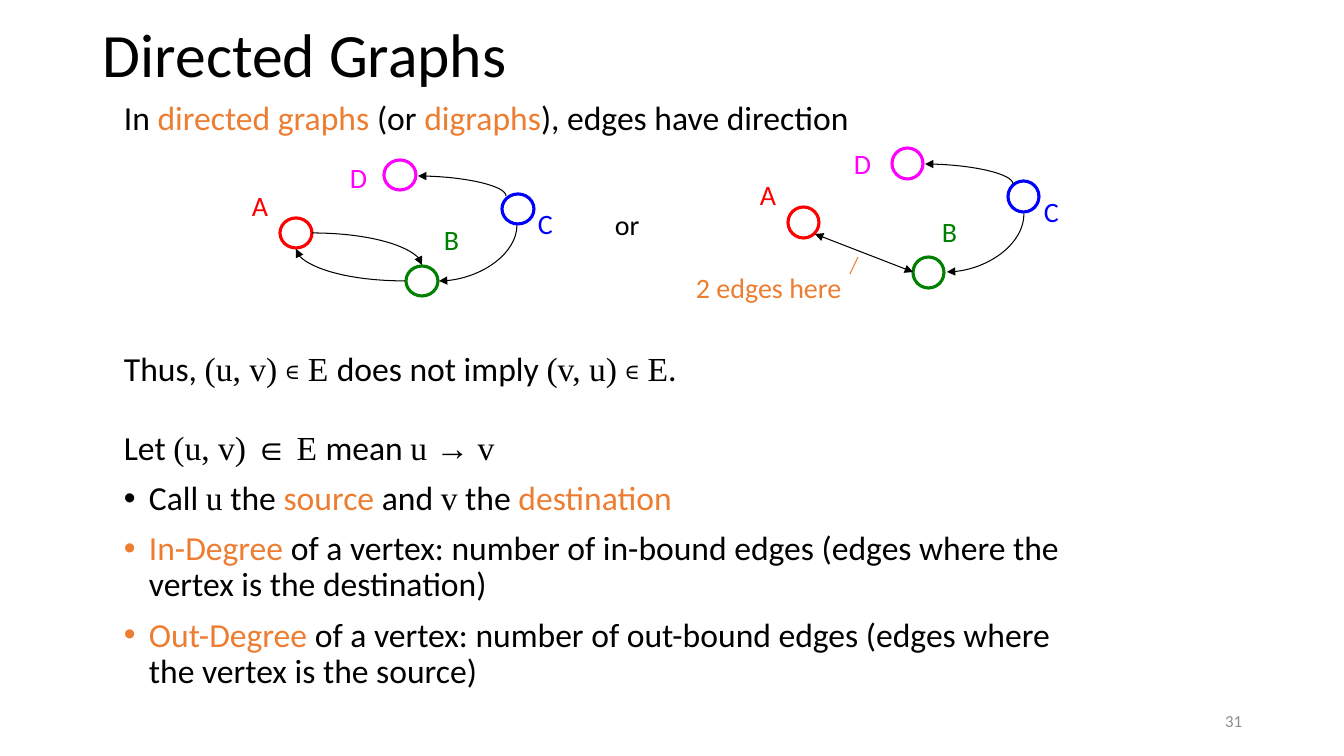
"""Build the Directed Graphs slide with two small digraphs and their definitions."""
import pptx
import pptx.dml.color
import pptx.enum.shapes
import pptx.enum.text
import pptx.oxml
import pptx.oxml.ns
import pptx.util

PX = 914400 / 100.8
THEME = {
    "sans": "Calibri", "serif": "Times New Roman",
    "black": "000000", "white": "FFFFFF", "accent": "ED7D31", "muted": "8C8C8C",
    "A": "FF0000", "B": "008000", "C": "0000FF", "D": "FF00FF",
    "title": 44, "body": 24, "label": 20, "number": 12,
}
ALIGN = pptx.enum.text.PP_ALIGN
ANCHOR = pptx.enum.text.MSO_ANCHOR
SHAPE = pptx.enum.shapes.MSO_SHAPE
CONNECTOR = pptx.enum.shapes.MSO_CONNECTOR

prs = pptx.Presentation()
prs.slide_width, prs.slide_height = round(1344 * PX), round(756 * PX)
s = prs.slides.add_slide(prs.slide_layouts[6])


def add_text(text, box, size="label", color="black", align=ALIGN.LEFT,
             anchor=ANCHOR.TOP, wrap=True, spacing=1.0):
    """Add a text box; text is a string or a list of (space before, bullet, runs)."""
    tf = s.shapes.add_textbox(*(round(v * PX) for v in box)).text_frame
    tf.word_wrap, tf.vertical_anchor = wrap, anchor
    paragraphs = [(0, False, [(text, color, "sans")])] if isinstance(text, str) else text
    for i, (before, bullet, runs) in enumerate(paragraphs):
        p = tf.add_paragraph() if i else tf.paragraphs[0]
        p.alignment, p.line_spacing = align, spacing
        p.space_before = pptx.util.Pt(before)
        if bullet:
            pPr = p._p.get_or_add_pPr()
            indent = round(25 * PX)
            pPr.set("marL", str(indent))
            pPr.set("indent", str(-indent))
            for tag, key, value in (("a:buFont", "typeface", "Arial"), ("a:buChar", "char", "•")):
                pptx.oxml.ns.qn(tag)
                el = pptx.oxml.parse_xml(
                    f'<{tag} {pptx.oxml.ns.nsdecls("a")} {key}="{value}"/>')
                pPr.append(el)
        for words, run_color, font in runs:
            r = p.add_run()
            r.text = words
            r.font.name, r.font.size = THEME[font], pptx.util.Pt(THEME[size])
            r.font.color.rgb = pptx.dml.color.RGBColor.from_string(THEME[run_color])


def add_edge(ends, arrows=(), color="black", curved=True):
    """Add an edge; a curved one leaves its first end horizontally."""
    kind = CONNECTOR.CURVE if curved else CONNECTOR.STRAIGHT
    c = s.shapes.add_connector(kind, *(round(v * PX) for v in ends))
    c.line.width = pptx.util.Pt(0.75)
    c.line.color.rgb = pptx.dml.color.RGBColor.from_string(THEME[color])
    spPr = c._element.spPr
    if curved:
        spPr.find(pptx.oxml.ns.qn("a:prstGeom")).set("prst", "curvedConnector2")
    ns = pptx.oxml.ns.nsdecls("a")
    for arrow in arrows:
        c.line._get_or_add_ln().append(pptx.oxml.parse_xml(f'<a:{arrow} {ns} type="triangle"/>'))
    spPr.append(pptx.oxml.parse_xml(f"<a:effectLst {ns}/>"))


add_text("Directed Graphs", (93, -15, 1159, 146), size="title",
         anchor=ANCHOR.MIDDLE, spacing=0.9)

body = [
    (0, False, [("In ", "black", "sans"), ("directed graphs ", "accent", "sans"),
                ("(or ", "black", "sans"), ("digraphs", "accent", "sans"),
                ("), edges have direction", "black", "sans")]),
    (154, False, [("Thus, ", "black", "sans"), ("(u, v) ∊ E ", "black", "serif"),
                  ("does not imply ", "black", "sans"), ("(v, u) ∊ E", "black", "serif"),
                  (".", "black", "sans")]),
    (30, False, [("Let ", "black", "sans"), ("(u, v) ∈ E ", "black", "serif"),
                 ("mean ", "black", "sans"), ("u → v", "black", "serif")]),
    (10, True, [("Call ", "black", "sans"), ("u", "black", "serif"),
                (" the ", "black", "sans"), ("source", "accent", "sans"),
                (" and ", "black", "sans"), ("v", "black", "serif"),
                (" the ", "black", "sans"), ("destination", "accent", "sans")]),
    (10, True, [("In-Degree", "accent", "sans"),
                (" of a vertex: number of in-bound edges (edges where the vertex is"
                 " the destination)", "black", "sans")]),
    (10, True, [("Out-Degree", "accent", "sans"),
                (" of a vertex: number of out-bound edges (edges where the vertex is"
                 " the source)", "black", "sans")]),
]
add_text(body, (114, 96, 956, 605), size="body", spacing=0.9)
add_text("31", (950, 701, 302, 40), size="number", color="muted",
         align=ALIGN.RIGHT, anchor=ANCHOR.MIDDLE)
add_text("or", (605, 203, 45, 44), wrap=False)
add_text("2 edges here", (686, 266, 229, 44), color="accent")

graphs = [
    ((32, 30), {"A": ((280, 218), (242, 184)), "B": ((406, 266), (434, 218)),
                "C": ((502, 194), (528, 202)), "D": ((384, 160), (340, 156))}),
    ((31, 31), {"A": ((788, 207), (750, 173)), "B": ((913, 257), (932, 210)),
                "C": ((1008, 181), (1034, 190)), "D": ((892, 148), (844, 142))}),
]
for node_size, nodes in graphs:
    for name, (node_at, label_at) in nodes.items():
        sp = s.shapes.add_shape(SHAPE.OVAL, *(round(v * PX) for v in node_at + node_size))
        sp.shadow.inherit = False
        sp.fill.solid()
        sp.fill.fore_color.rgb = pptx.dml.color.RGBColor.from_string(THEME["white"])
        sp.line.color.rgb = pptx.dml.color.RGBColor.from_string(THEME[name])
        sp.line.width = pptx.util.Pt(2.25)
        add_text(name, label_at + (36, 44), color=name, wrap=False)

edges = [
    ((439, 281, 517, 225), "headEnd"),
    ((405, 281, 296, 249), "tailEnd"),
    ((312, 233, 422, 265), "tailEnd"),
    ((418, 176, 506, 196), "headEnd"),
    ((947, 272, 1024, 214), "headEnd"),
    ((925, 164, 1013, 184), "headEnd"),
]
for ends, arrow in edges:
    add_edge(ends, [arrow])
add_edge((913, 272, 815, 234), ["headEnd", "tailEnd"], curved=False)
add_edge((850, 274, 858, 257), color="accent", curved=False)

prs.save("out.pptx")
